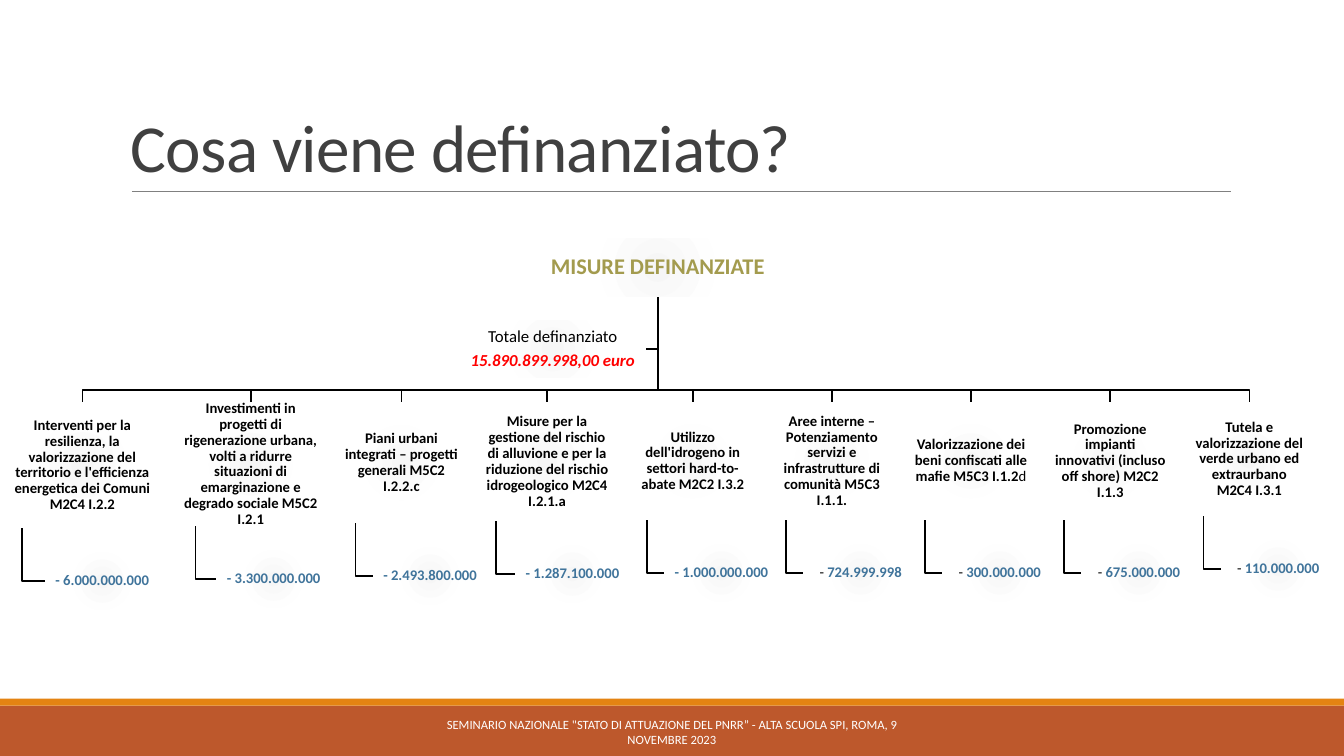
from dataclasses import dataclass

from pptx import Presentation
from pptx.dml.color import RGBColor
from pptx.enum.shapes import MSO_CONNECTOR, MSO_SHAPE
from pptx.enum.text import MSO_ANCHOR, PP_ALIGN
from pptx.oxml import parse_xml
from pptx.oxml.ns import nsdecls, qn
from pptx.util import Pt


@dataclass(frozen=True)
class Theme:
    font: str = "Calibri"
    black: str = "000000"
    white: str = "FFFFFF"
    title: str = "404040"
    rule: str = "808080"
    heading: str = "A39B4E"
    total: str = "FF0000"
    amount: str = "40749B"
    footer_bar: str = "BD582C"
    accent_bar: str = "E48312"
    glow: tuple = ((0, "F6F6F6"), (45, "FEFEFE"), (100, "FFFFFF"))
    title_size: float = 48
    heading_size: float = 16
    total_size: float = 12
    body_size: float = 10.5
    footer_size: float = 9


@dataclass(frozen=True)
class Span:
    text: str
    color: str
    bold: bool = False
    italic: bool = False


@dataclass(frozen=True)
class Area:
    left: float
    top: float
    width: float
    height: float

    @property
    def center(self) -> float:
        return self.left + self.width / 2

    @property
    def middle(self) -> float:
        return self.top + self.height / 2

    @property
    def bottom(self) -> float:
        return self.top + self.height

    def lengths(self) -> list:
        return [Pt(value) for value in (self.left, self.top, self.width, self.height)]


@dataclass(frozen=True)
class Measure:
    label: str
    amount: str
    width: float = 82.1
    height: float = 84.2
    suffix: str = ""
    plain_sign: bool = True


THEME = Theme()
GAP = 17.3
HEADING = Area(381, 170.6, 177.6, 41)
TOTAL = Area(328.4, 229, 133, 41)
BAR_Y, LABEL_Y = 278.6, 287.3

MEASURES = [
    Measure("Interventi per la resilienza, la valorizzazione del territorio e l'efficienza "
            "energetica dei Comuni M2C4 I.2.2", "6.000.000.000", 107.3, 90, plain_sign=False),
    Measure("Investimenti in progetti di rigenerazione urbana, volti a ridurre situazioni di "
            "emarginazione e degrado sociale M5C2 I.2.1", "3.300.000.000", 98.6, 88.6, plain_sign=False),
    Measure("Piani urbani integrati – progetti generali M5C2 I.2.2.c",
            "2.493.800.000", height=86.4, plain_sign=False),
    Measure("Misure per la gestione del rischio di alluvione e per la riduzione del rischio "
            "idrogeologico M2C4 I.2.1.a", "1.287.100.000", 91.4, 85, plain_sign=False),
    Measure("Utilizzo dell'idrogeno in settori hard-to-abate M2C2 I.3.2",
            "1.000.000.000", plain_sign=False),
    Measure("Aree interne – Potenziamento servizi e infrastrutture di comunità M5C3 I.1.1.",
            "724.999.998"),
    Measure("Valorizzazione dei beni confiscati alle mafie M5C3 I.1.2", "300.000.000", suffix="d"),
    Measure("Promozione impianti innovativi (incluso off shore) M2C2 I.1.3", "675.000.000"),
    Measure("Tutela e valorizzazione del verde urbano ed extraurbano M2C4 I.3.1",
            "110.000.000", height=81.4),
]


def style(font, span: Span) -> None:
    font.color.rgb = RGBColor.from_string(span.color)
    font.bold = span.bold
    font.italic = span.italic


def add_text(page, area: Area, lines: list[list[Span]], size: float, margin: float = 0.7,
             spacing: float = 0.9, after: float = 0, align=PP_ALIGN.CENTER, anchor=MSO_ANCHOR.MIDDLE):
    box = page.shapes.add_textbox(*area.lengths())
    frame = box.text_frame
    frame.word_wrap = True
    frame.vertical_anchor = anchor
    frame.margin_left = frame.margin_right = Pt(margin)
    frame.margin_top = frame.margin_bottom = Pt(margin / 2)
    for index, spans in enumerate(lines):
        para = frame.add_paragraph() if index else frame.paragraphs[0]
        para.alignment = align
        para.line_spacing = spacing
        para.space_after = Pt(after)
        para.font.name = THEME.font
        para.font.size = Pt(size)
        for span in spans:
            run = para.add_run()
            run.text = span.text
            style(para.font if len(spans) == 1 else run.font, span)
    return box


def add_panel(page, area: Area, lines: list[list[Span]], size: float) -> None:
    """Text on a soft circular gradient."""
    box = add_text(page, area, lines, size, after=size * 0.35)
    box.fill.background()
    stops = "".join(f'<a:gs pos="{place * 1000}"><a:srgbClr val="{color}"/></a:gs>'
                    for place, color in THEME.glow)
    gradient = parse_xml(
        f'<a:gradFill {nsdecls("a")} rotWithShape="1"><a:gsLst>{stops}</a:gsLst><a:path path="circle">'
        '<a:fillToRect l="100000" t="100000" r="100000" b="100000"/></a:path></a:gradFill>')
    properties = box._element.spPr
    properties.replace(properties.find(qn("a:noFill")), gradient)


def add_branch(page, points: list[tuple[float, float]]) -> None:
    start, *rest = [(Pt(x), Pt(y)) for x, y in points]
    builder = page.shapes.build_freeform(*start)
    builder.add_line_segments(rest, close=False)
    branch = builder.convert_to_shape()
    branch.shadow.inherit = False
    branch.fill.background()
    branch.line.color.rgb = RGBColor.from_string(THEME.black)
    branch.line.width = Pt(1.25)


def add_bar(page, area: Area, color: str) -> None:
    bar = page.shapes.add_shape(MSO_SHAPE.RECTANGLE, *area.lengths())
    bar.shadow.inherit = False
    bar.fill.solid()
    bar.fill.fore_color.rgb = RGBColor.from_string(color)
    bar.line.fill.background()


def add_frame(page) -> None:
    # Footer bars and title rule
    add_bar(page, Area(0, 504, 960, 36), THEME.footer_bar)
    add_bar(page, Area(0, 499, 960, 5), THEME.accent_bar)
    rule = page.shapes.add_connector(MSO_CONNECTOR.STRAIGHT, Pt(94.3), Pt(136.8), Pt(879), Pt(136.8))
    rule.line.color.rgb = RGBColor.from_string(THEME.rule)
    rule.line.width = Pt(0.5)
    rule._element.spPr.append(parse_xml(f'<a:effectLst {nsdecls("a")}/>'))

    # Title and footer text
    title = add_text(page, Area(86.4, 22.3, 792, 114.5), [[Span("Cosa viene definanziato?", THEME.title)]],
                     THEME.title_size, 7.2, 0.85, align=PP_ALIGN.LEFT, anchor=MSO_ANCHOR.BOTTOM)
    title.text_frame.paragraphs[0].runs[0]._r.get_or_add_rPr().set("spc", "-50")
    footer = 'SEMINARIO NAZIONALE "STATO DI ATTUAZIONE DEL PNRR” - ALTA SCUOLA SPI, ROMA, 9 NOVEMBRE 2023'
    add_text(page, Area(290.2, 508.4, 379.4, 28.8), [[Span(footer, THEME.white)]],
             THEME.footer_size, 7.2, 1)


def add_tree(page) -> None:
    # Column areas: each amount hangs a quarter of the way in, below its label
    columns = []
    left = 5.2
    for measure in MEASURES:
        label = Area(left, LABEL_Y, measure.width, measure.height)
        amount = Area(left + measure.width / 4, label.bottom + GAP, 82.1, 41)
        columns.append((measure, label, amount))
        left += measure.width + GAP

    # Branches
    root = (HEADING.center, HEADING.bottom)
    add_branch(page, [root, (HEADING.center, TOTAL.middle), (TOTAL.left + TOTAL.width, TOTAL.middle)])
    for _, label, amount in columns:
        add_branch(page, [root, (HEADING.center, BAR_Y), (label.center, BAR_Y), (label.center, label.top)])
        stem = label.left + label.width / 10
        add_branch(page, [(stem, label.bottom), (stem, amount.middle), (amount.left, amount.middle)])

    # Heading and total
    add_panel(page, HEADING, [[Span("MISURE DEFINANZIATE", THEME.heading, True)]], THEME.heading_size)
    add_panel(page, TOTAL, [[Span("Totale definanziato", THEME.black)],
                            [Span("15.890.899.998,00 euro", THEME.total, True, True)]], THEME.total_size)

    # Measures and their amounts
    for measure, label, amount in columns:
        words = [Span(measure.label, THEME.black, True)]
        if measure.suffix:
            words.append(Span(measure.suffix, THEME.black))
        add_panel(page, label, [words], THEME.body_size)
        if measure.plain_sign:
            figures = [Span("- ", THEME.black), Span(measure.amount, THEME.amount, True)]
        else:
            figures = [Span(f"- {measure.amount}", THEME.amount, True)]
        add_panel(page, amount, [figures], THEME.body_size)


def main() -> None:
    deck = Presentation()
    deck.slide_width, deck.slide_height = Pt(960), Pt(540)
    page = deck.slides.add_slide(deck.slide_layouts[6])
    add_frame(page)
    add_tree(page)
    deck.save("out.pptx")


if __name__ == "__main__":
    main()
